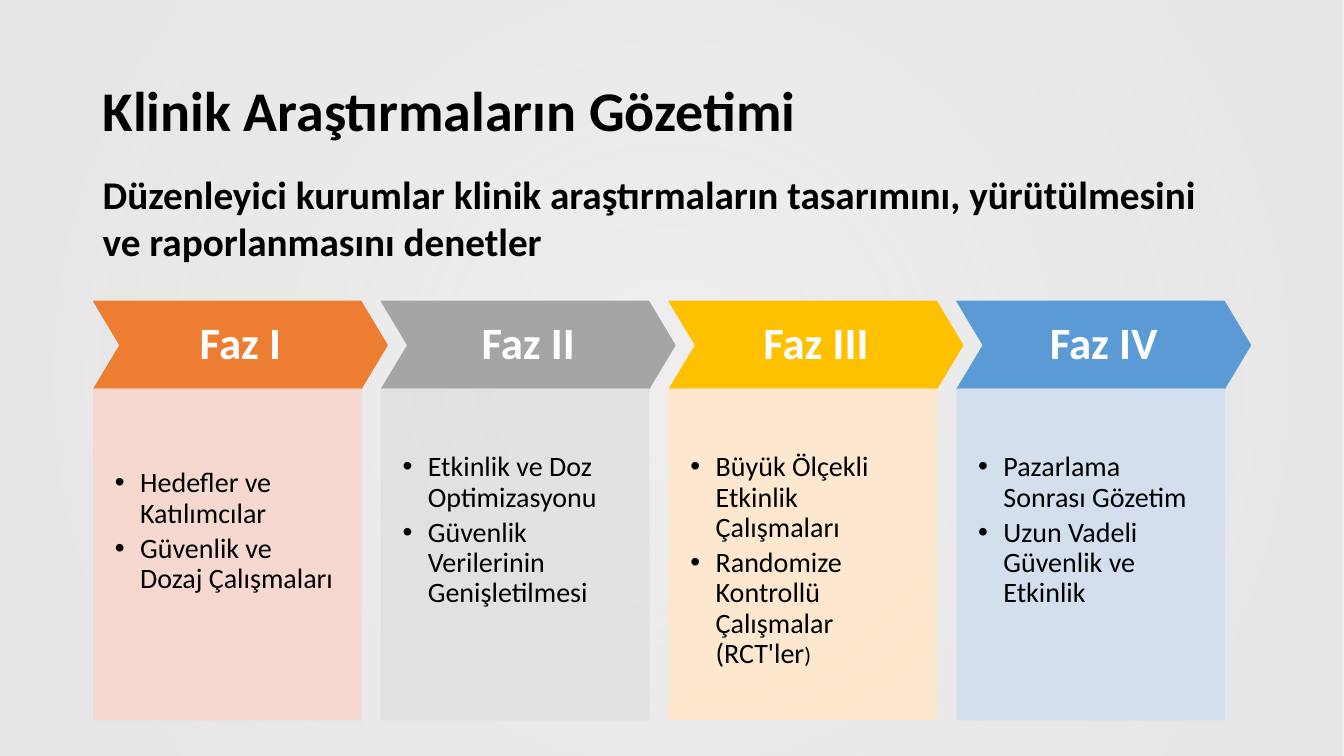
from dataclasses import dataclass

from lxml.etree import SubElement
from pptx import Presentation
from pptx.dml.color import RGBColor
from pptx.enum.shapes import MSO_SHAPE
from pptx.enum.text import MSO_ANCHOR, PP_ALIGN
from pptx.oxml.ns import qn
from pptx.util import Inches, Pt


@dataclass(frozen=True)
class Theme:
    font: str = "Calibri"
    ink: str = "000000"
    light: str = "FFFFFF"
    backdrop: str = "E7E6E6"
    title: int = 40
    phase: int = 32
    subtitle: int = 28
    body: int = 20
    small: int = 16


THEME = Theme()
PHASES = [
    ("Faz I", "ED7D31", "F8D7CE", 0.79,
     ["Hedefler ve Katılımcılar", "Güvenlik ve Dozaj Çalışmaları"], ""),
    ("Faz II", "A5A5A5", "E1E1E1", 0.63,
     ["Etkinlik ve Doz Optimizasyonu", "Güvenlik Verilerinin Genişletilmesi"], ""),
    ("Faz III", "FFC000", "FFE8CC", 0.63,
     ["Büyük Ölçekli Etkinlik Çalışmaları", "Randomize Kontrollü Çalışmalar (RCT'ler"], ")"),
    ("Faz IV", "5B9BD5", "D2DEEF", 0.63,
     ["Pazarlama Sonrası Gözetim", "Uzun Vadeli Güvenlik ve Etkinlik"], ""),
]


def apply(target, values):
    for name, value in values.items():
        setattr(target, name, value)


def set_alpha(element, percents):
    for color, percent in zip(element.iter(qn("a:srgbClr")), percents):
        SubElement(color, qn("a:alpha"), val=str(percent * 1000))


class SlideBuilder:
    """Draws themed elements on the current slide."""

    def __init__(self, page, theme):
        self.page = page
        self.theme = theme

    def frame(self, shape, anchor, margins):
        sides = ("margin_left", "margin_top", "margin_right", "margin_bottom")
        frame = shape.text_frame
        apply(frame, {"word_wrap": True, "vertical_anchor": anchor})
        apply(frame, dict(zip(sides, map(Inches, margins))))
        return frame

    def span(self, para, text, size, color, bold=False):
        span = para.add_run()
        span.text = text
        apply(span.font, {"name": self.theme.font, "size": Pt(size), "bold": bold})
        span.font.color.rgb = RGBColor.from_string(color)

    def shape(self, kind, area, color):
        shape = self.page.shapes.add_shape(kind, *map(Inches, area))
        shape.shadow.inherit = False
        shape.fill.solid()
        for paint in (shape.fill.fore_color, shape.line.color):
            paint.rgb = RGBColor.from_string(color)
        shape.line.width = Pt(1)
        return shape

    def backdrop(self, width, height):
        shape = self.shape(MSO_SHAPE.RECTANGLE, (0, 0, width, height), self.theme.backdrop)
        shape.line.fill.background()
        shape.fill.gradient()
        for stop, position in zip(shape.fill.gradient_stops, (0.1, 0.85)):
            stop.position = position
            stop.color.rgb = RGBColor.from_string(self.theme.backdrop)
        gradient = shape.element.spPr.find(qn("a:gradFill"))
        set_alpha(gradient, (68, 97))
        gradient.remove(gradient.find(qn("a:lin")))
        path = SubElement(gradient, qn("a:path"), {"path": "circle"})
        SubElement(path, qn("a:fillToRect"), dict.fromkeys("ltrb", "50000"))

    def heading(self, area, text, size, anchor, spacing):
        box = self.page.shapes.add_textbox(*map(Inches, area))
        para = self.frame(box, anchor, (0.1, 0.05, 0.1, 0.05)).paragraphs[0]
        para.line_spacing = spacing
        self.span(para, text, size, self.theme.ink, True)

    def chevron(self, area, text, color):
        shape = self.shape(MSO_SHAPE.CHEVRON, area, color)
        shape.adjustments[0] = 0.3
        para = self.frame(shape, MSO_ANCHOR.MIDDLE, [0.11] * 4).paragraphs[0]
        apply(para, {"alignment": PP_ALIGN.CENTER, "line_spacing": 0.9})
        self.span(para, text, self.theme.phase, self.theme.light, True)

    def panel(self, area, color, top, items, ending):
        shape = self.shape(MSO_SHAPE.RECTANGLE, area, color)
        set_alpha(shape.element.spPr, (90, 90))
        frame = self.frame(shape, MSO_ANCHOR.TOP, (0.21, top, 0.21, 0.42))
        for index, item in enumerate(items):
            para = frame.add_paragraph() if index else frame.paragraphs[0]
            self.bullet(para)
            self.span(para, item, self.theme.body, self.theme.ink)
        if ending:
            self.span(para, ending, self.theme.small, self.theme.ink)

    def bullet(self, para):
        properties = para._p.get_or_add_pPr()
        properties.set("marL", str(Inches(0.25)))
        properties.set("indent", str(Inches(-0.25)))
        SubElement(properties, qn("a:buFont"), typeface="Arial")
        SubElement(properties, qn("a:buChar"), char="•")
        apply(para, {"alignment": PP_ALIGN.LEFT, "line_spacing": 0.9, "space_after": Pt(3.6)})


def main():
    width, height = 13.33, 7.5
    deck = Presentation()
    apply(deck, {"slide_width": Inches(width), "slide_height": Inches(height)})
    builder = SlideBuilder(deck.slides.add_slide(deck.slide_layouts[6]), THEME)
    builder.backdrop(width, height)
    builder.heading((0.92, 0.4, 11.5, 1.45), "Klinik Araştırmaların Gözetimi",
                    THEME.title, MSO_ANCHOR.MIDDLE, 0.9)
    left, top, pitch, band = 0.93, 2.99, 2.854, 0.87
    for index, (name, strong, pale, inset, items, ending) in enumerate(PHASES):
        x = left + index * pitch
        builder.chevron((x, top, 2.91, band), name, strong)
        builder.panel((x, top + band, 2.65, 3.28), pale, inset, items, ending)
    builder.heading((0.92, 1.64, 11.14, 1.04),
                    "Düzenleyici kurumlar klinik araştırmaların tasarımını, "
                    "yürütülmesini ve raporlanmasını denetler",
                    THEME.subtitle, MSO_ANCHOR.TOP, 1.0)
    deck.save("out.pptx")


if __name__ == "__main__":
    main()
